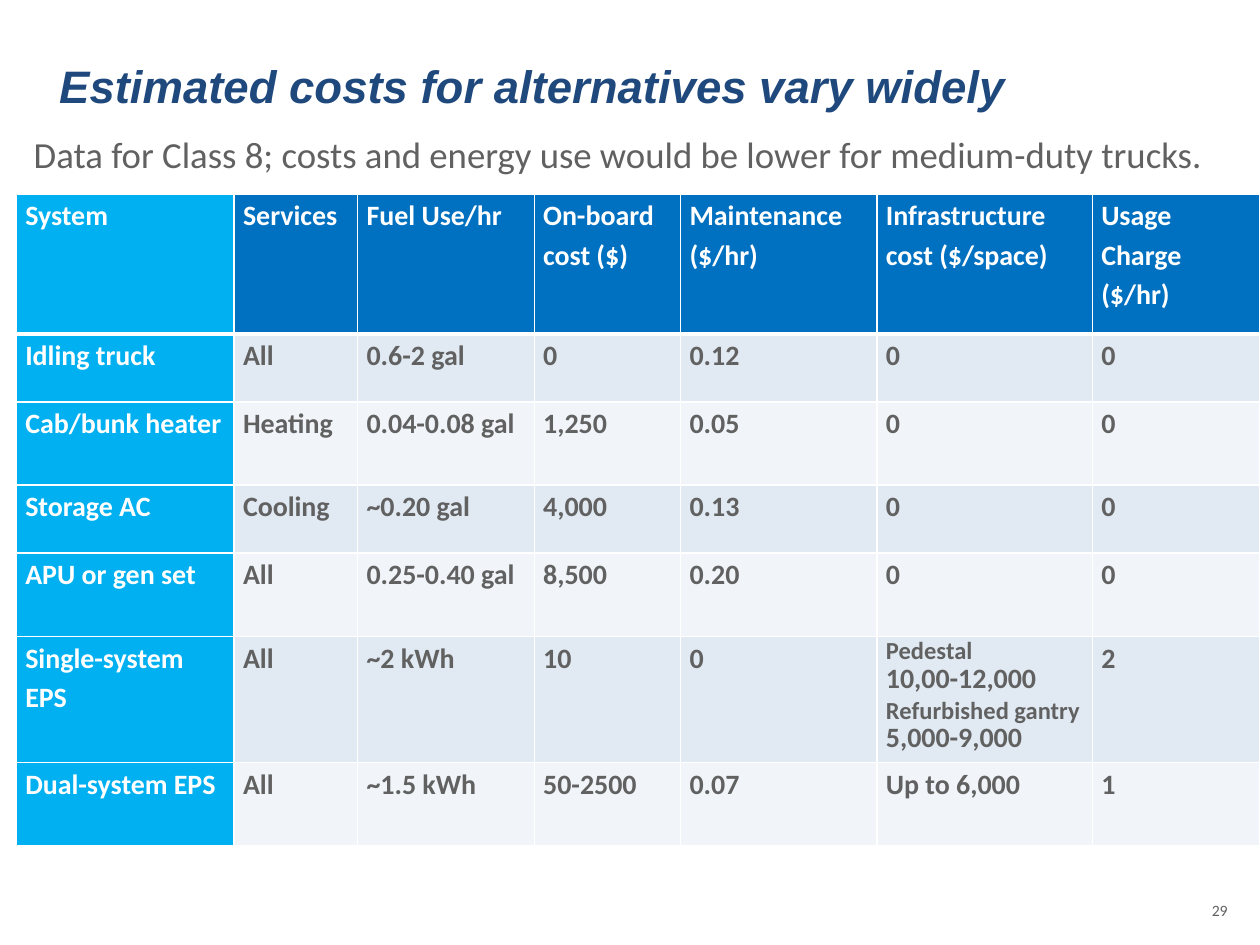
from dataclasses import dataclass

from lxml.etree import SubElement
from pptx import Presentation
from pptx.dml.color import RGBColor as Rgb
from pptx.enum.text import MSO_ANCHOR as Anchor, MSO_AUTO_SIZE as AutoSize, PP_ALIGN as Align
from pptx.oxml.ns import qn
from pptx.util import Cm, Pt


@dataclass(frozen=True)
class Theme:
    title_color: str = "1F497D"
    text_color: str = "616161"
    white: str = "FFFFFF"
    header_fill: str = "0070C0"
    system_fill: str = "00B0F0"
    band_fills: tuple = ("F1F5F9", "E1EAF2")
    title_size: int = 26
    subtitle_size: int = 21
    cell_size: int = 16
    label_size: int = 14
    number_size: int = 9


theme = Theme()


def write(paragraph, text, size, color=theme.text_color, font="Calibri",
          bold=False, italic=False, align=Align.LEFT, spacing=None):
    paragraph.alignment = align
    paragraph.line_spacing = spacing
    run = paragraph.add_run()
    run.text = text
    run.font.name = font
    run.font.size = Pt(size)
    run.font.bold = bold
    run.font.italic = italic
    run.font.color.rgb = Rgb.from_string(color)


def set_borders(cell, **widths):
    properties = cell._tc.get_or_add_tcPr()
    for side in "LRTB":
        line = SubElement(properties, qn(f"a:ln{side}"), w=str(Pt(widths.get(side, 1))))
        fill = SubElement(line, qn("a:solidFill"))
        SubElement(fill, qn("a:srgbClr"), val=theme.white)


deck = Presentation()
deck.slide_width, deck.slide_height = Cm(25.4), Cm(19.05)
slide = deck.slides.add_slide(deck.slide_layouts[5])

heading = slide.shapes.title
heading.left, heading.top, heading.width, heading.height = Cm(0.94), Cm(0.91), Cm(22.1), Cm(1.19)
heading.text_frame.vertical_anchor = Anchor.TOP
heading.text_frame.auto_size = AutoSize.NONE
heading.text_frame.margin_top = Cm(0.25)
write(heading.text_frame.paragraphs[0], "Estimated costs for alternatives vary widely",
      theme.title_size, color=theme.title_color, font="Arial", bold=True, italic=True)

column_widths = [4.39, 2.49, 3.56, 2.95, 3.96, 4.34, 3.38]
row_heights = [2.82, 1.37, 1.68, 1.37, 1.68, 2.54, 1.68]
gantry_costs = [
    ("Pedestal", theme.label_size),
    ("10,00-12,000", theme.cell_size),
    ("Refurbished gantry", theme.label_size),
    ("5,000-9,000", theme.cell_size),
]
systems = [
    ["System", "Services", "Fuel Use/hr", "On-board cost ($)", "Maintenance ($/hr)",
     "Infrastructure cost ($/space)", "Usage Charge ($/hr)"],
    ["Idling truck", "All", "0.6-2 gal", "0", "0.12", "0", "0"],
    ["Cab/bunk heater", "Heating", "0.04-0.08 gal", "1,250", "0.05", "0", "0"],
    ["Storage AC", "Cooling", "~0.20 gal", "4,000", "0.13", "0", "0"],
    ["APU or gen set", "All", "0.25-0.40 gal", "8,500", "0.20", "0", "0"],
    ["Single-system EPS", "All", "~2 kWh", "10", "0", gantry_costs, "2"],
    ["Dual-system EPS", "All", "~1.5 kWh", "50-2500", "0.07", "Up to 6,000", "1"],
]

costs = slide.shapes.add_table(len(row_heights), len(column_widths), Cm(0.33), Cm(3.91),
                               Cm(sum(column_widths)), Cm(sum(row_heights))).table
for column, width in zip(costs.columns, column_widths):
    column.width = Cm(width)
for row, height in zip(costs.rows, row_heights):
    row.height = Cm(height)

for r, system in enumerate(systems):
    for c, value in enumerate(system):
        cell = costs.cell(r, c)
        cell.margin_left = cell.margin_right = Cm(0.18)
        cell.margin_top = cell.margin_bottom = 0
        set_borders(cell, T=3 if r == 1 else 1, B=3 if r == 0 else 1)
        if c == 0:
            shade = theme.system_fill
        elif r == 0:
            shade = theme.header_fill
        else:
            shade = theme.band_fills[r % 2]
        cell.fill.solid()
        cell.fill.fore_color.rgb = Rgb.from_string(shade)

        color = theme.white if r == 0 or c == 0 else theme.text_color
        stacked = isinstance(value, list)
        lines = value if stacked else [(value, theme.cell_size)]
        for i, (text, size) in enumerate(lines):
            frame = cell.text_frame
            paragraph = frame.add_paragraph() if i else frame.paragraphs[0]
            write(paragraph, text, size, color=color, bold=True,
                  spacing=Pt(17) if stacked else 1.15)

captions = [
    ("29", (23.93, 18.03, 1.07, 1.02), theme.number_size, Align.RIGHT),
    ("Data for Class 8; costs and energy use would be lower for medium-duty trucks.",
     (0.43, 2.54, 24.77, 1.14), theme.subtitle_size, Align.LEFT),
]
for text, place, size, align in captions:
    caption = slide.shapes.add_textbox(*map(Cm, place)).text_frame
    caption.word_wrap = True
    write(caption.paragraphs[0], text, size, align=align)

deck.save("out.pptx")
